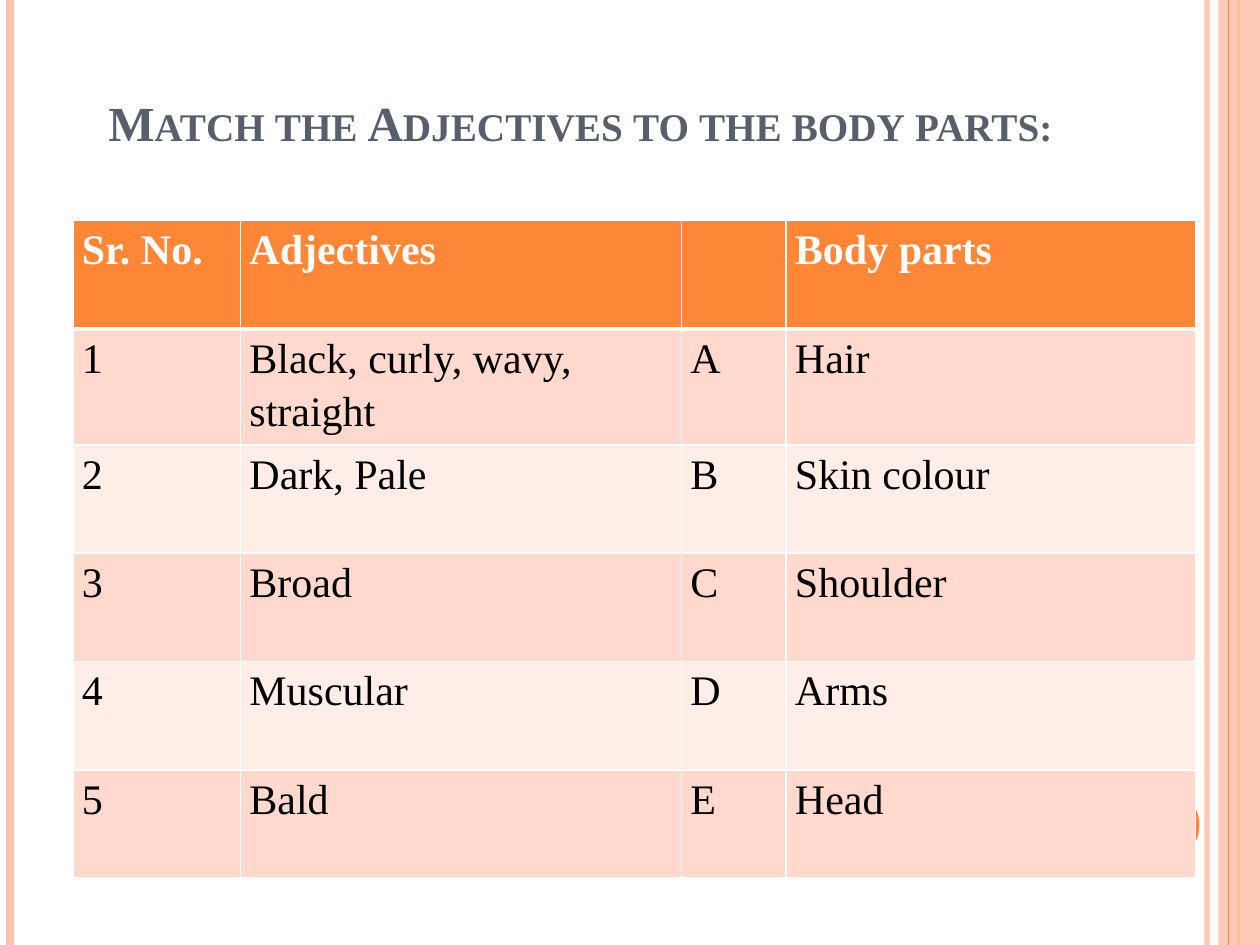
from dataclasses import dataclass

from lxml.etree import SubElement
from pptx import Presentation
from pptx.dml.color import RGBColor
from pptx.enum.shapes import MSO_CONNECTOR, MSO_SHAPE
from pptx.enum.text import MSO_ANCHOR
from pptx.oxml.ns import qn
from pptx.util import Inches, Pt

TITLE = "Match the Adjectives to the body parts:"
HEADER = ("Sr. No.", "Adjectives", "", "Body parts")
MATCHES = [
    ("Black, curly, wavy, straight", "Hair"),
    ("Dark, Pale", "Skin colour"),
    ("Broad", "Shoulder"),
    ("Muscular", "Arms"),
    ("Bald", "Head"),
]
ROWS = [HEADER] + [
    (str(i + 1), adjectives, "ABCDE"[i], part)
    for i, (adjectives, part) in enumerate(MATCHES)
]


@dataclass(frozen=True)
class Theme:
    font: str = "Times New Roman"
    title_size: int = 28
    cell_size: int = 24
    title: str = "575F6D"
    orange: str = "FE8637"
    peach: str = "FEC3AE"
    bands: tuple = ("FFEDE8", "FFD9CE")
    white: str = "FFFFFF"
    black: str = "000000"


T = Theme()
WIDTH, HEIGHT = 10, 7.5
COLUMNS = (1.33, 3.5, 0.83, 3.25)
ROW_HEIGHT = 0.86
TABLE_LEFT, TABLE_TOP = 0.58, 1.75

# x, colour, width in points, opacity in percent
BACK_RULES = [(9.58, T.peach, 3, 93), (0.08, T.peach, 4.5, 100), (9.83, T.orange, 1.5, 100)]
FRONT_RULES = [(9.75, T.orange, 0.75, 100)]


def rgb(color):
    return RGBColor.from_string(color)


def set_opacity(fill, percent):
    """Add an alpha value to the solid colour inside a fill or line element."""
    if percent < 100:
        color = next(fill.iter(qn("a:srgbClr")))
        SubElement(color, qn("a:alpha")).set("val", str(percent * 1000))


def add_rules(slide, rules):
    for x, color, width, opacity in rules:
        s = slide.shapes.add_connector(
            MSO_CONNECTOR.STRAIGHT, Inches(x), 0, Inches(x), Inches(HEIGHT))
        s.line.color.rgb = rgb(color)
        s.line.width = Pt(width)
        set_opacity(s.line._get_or_add_ln(), opacity)
        SubElement(s._element.spPr, qn("a:effectLst"))


def add_solid(slide, kind, box, color, opacity=100):
    s = slide.shapes.add_shape(kind, *map(Inches, box))
    s.shadow.inherit = False
    s.line.fill.background()
    s.fill.solid()
    s.fill.fore_color.rgb = rgb(color)
    set_opacity(s._element.spPr, opacity)


def style(font, size, color, bold):
    font.name, font.size, font.bold = T.font, Pt(size), bold
    font.color.rgb = rgb(color)


def add_title(slide):
    tf = slide.shapes.add_textbox(*map(Inches, (0.67, 0.3, 8.83, 0.95))).text_frame
    tf.word_wrap = True
    tf.vertical_anchor = MSO_ANCHOR.BOTTOM
    tf.margin_left = Inches(0.19)
    p = tf.paragraphs[0]
    style(p.font, T.title_size, T.title, True)
    r = p.add_run()
    r.text = TITLE
    r._r.get_or_add_rPr().set("cap", "small")


def set_borders(cell, bottom):
    tcPr = cell._tc.get_or_add_tcPr()
    for i, (side, width) in enumerate((("L", 1), ("R", 1), ("T", 1), ("B", bottom))):
        ln = tcPr.makeelement(qn(f"a:ln{side}"), {"w": str(Pt(width))})
        fill = SubElement(ln, qn("a:solidFill"))
        SubElement(fill, qn("a:srgbClr")).set("val", T.white)
        tcPr.insert(i, ln)


def add_match_table(slide):
    table = slide.shapes.add_table(
        len(ROWS), len(COLUMNS), Inches(TABLE_LEFT), Inches(TABLE_TOP),
        Inches(sum(COLUMNS)), Inches(ROW_HEIGHT * len(ROWS))).table
    for column, width in zip(table.columns, COLUMNS):
        column.width = Inches(width)
    for i, texts in enumerate(ROWS):
        table.rows[i].height = Inches(ROW_HEIGHT)
        is_header = i == 0
        for j, text in enumerate(texts):
            cell = table.cell(i, j)
            cell.margin_left = cell.margin_right = Inches(0.07)
            cell.margin_top = cell.margin_bottom = 0
            cell.fill.solid()
            cell.fill.fore_color.rgb = rgb(T.orange if is_header else T.bands[i % 2])
            set_borders(cell, 3 if is_header else 1)
            cell.text = text
            p = cell.text_frame.paragraphs[0]
            p.line_spacing = 1.15
            style(p.font, T.cell_size, T.white if is_header else T.black, is_header)


def main():
    prs = Presentation()
    prs.slide_width, prs.slide_height = Inches(WIDTH), Inches(HEIGHT)
    slide = prs.slides.add_slide(prs.slide_layouts[6])
    add_rules(slide, BACK_RULES)
    add_solid(slide, MSO_SHAPE.RECTANGLE, (9.67, 0, 0.33, HEIGHT), T.peach, 87)
    add_rules(slide, FRONT_RULES)
    add_solid(slide, MSO_SHAPE.OVAL, (8.92, 6.25, 0.6, 0.6), T.orange)
    add_title(slide)
    add_match_table(slide)
    prs.save("out.pptx")


if __name__ == "__main__":
    main()
